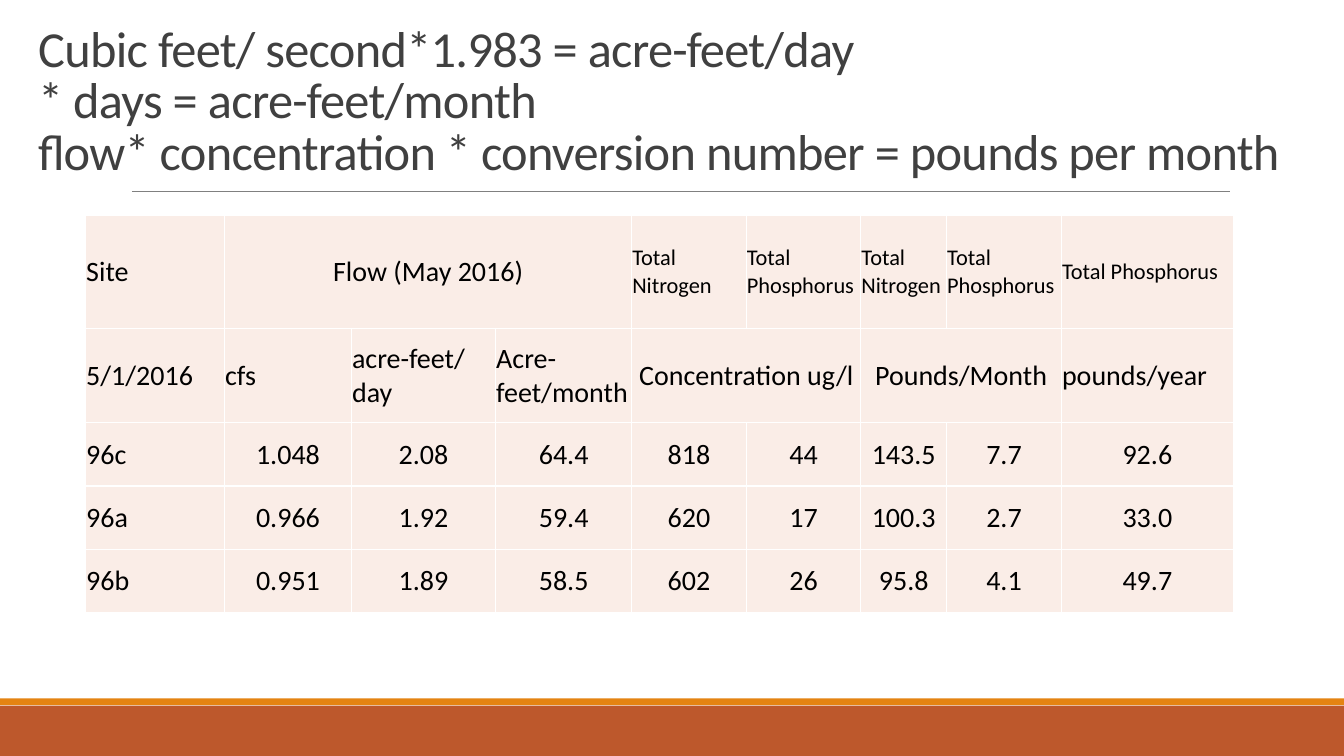
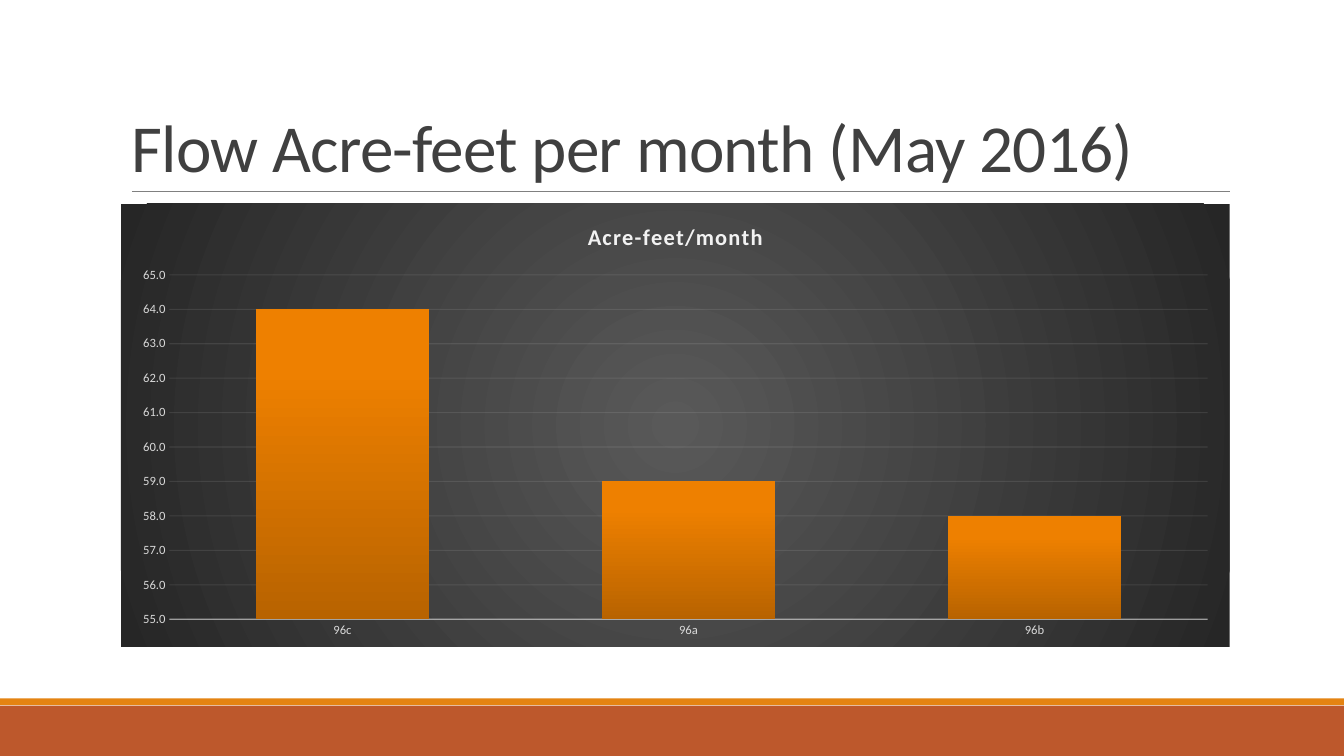
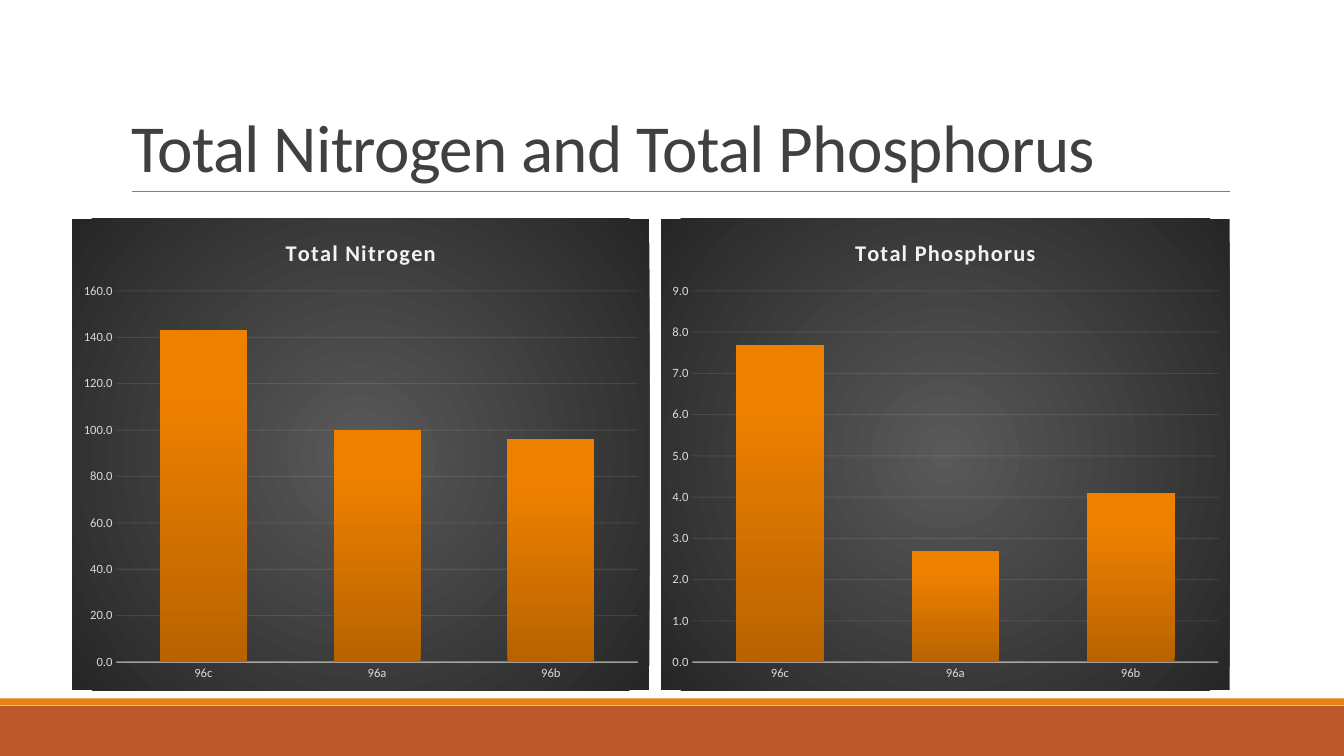
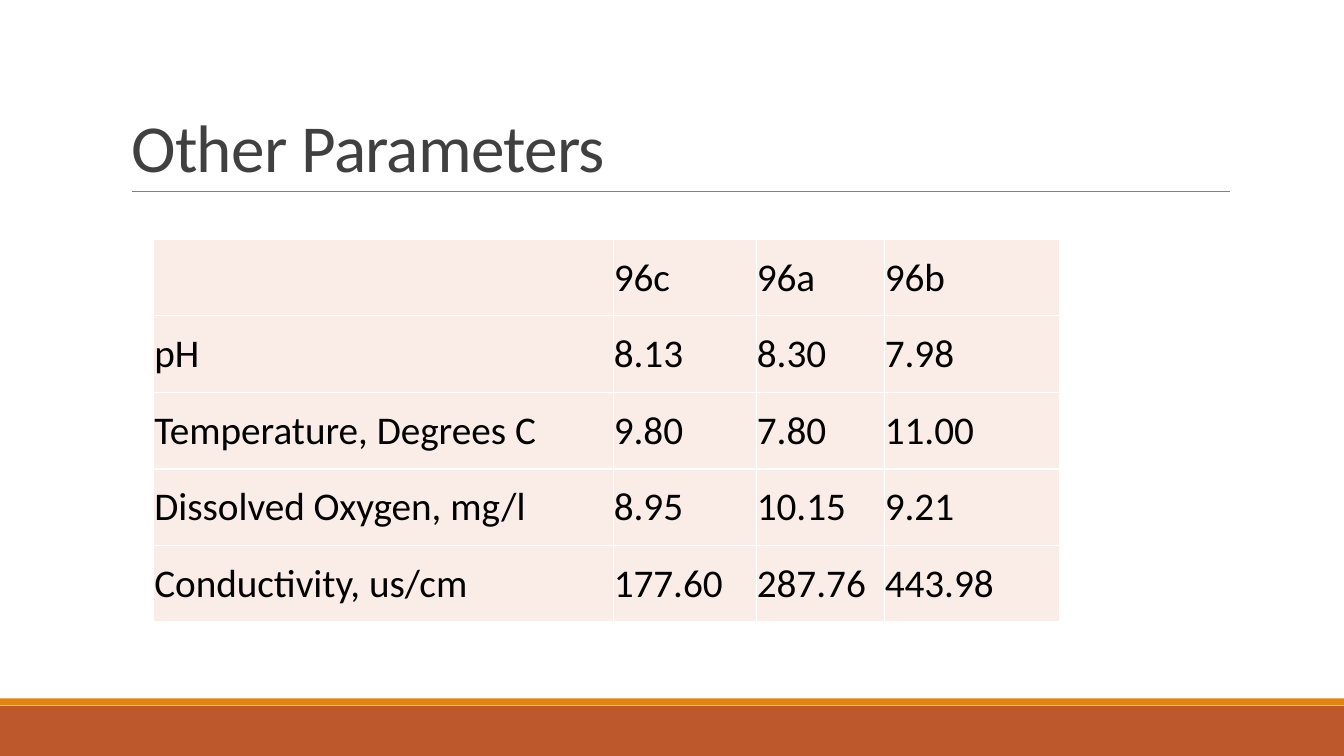
from lxml import etree
from pptx import Presentation
from pptx.chart.data import CategoryChartData
from pptx.dml.color import RGBColor
from pptx.enum.chart import XL_CHART_TYPE as ChartType, XL_TICK_MARK as Tick
from pptx.enum.shapes import MSO_CONNECTOR as Connector, MSO_SHAPE as Shape
from pptx.enum.text import MSO_ANCHOR as Anchor, PP_ALIGN as Align
from pptx.oxml import parse_xml
from pptx.oxml.ns import nsdecls, qn
from pptx.util import Pt

# Shared look
FONT = "Calibri"
RUST = RGBColor(0xBD, 0x58, 0x2C)
ORANGE = RGBColor(0xE4, 0x83, 0x12)
RULE_GRAY = RGBColor(0x80, 0x80, 0x80)
TITLE_GRAY = RGBColor(0x40, 0x40, 0x40)
BLACK = RGBColor(0, 0, 0)
CELL_PINK = RGBColor(0xFA, 0xED, 0xE7)
AXIS_GRAY = RGBColor(0xD9, 0xD9, 0xD9)
PALE = RGBColor(0xF2, 0xF2, 0xF2)
BACKDROP_STOPS = [(0, "595959"), (100, "262626")]
BAR_STOPS = [(0, "B86300"), (80, "EE8000"), (100, "EF8100")]
BACKDROP_SHADE = ('<a:path path="circle"><a:fillToRect l="50000" t="50000" '
                  'r="50000" b="50000"/></a:path>')
BAR_SHADE = '<a:lin ang="16200000" scaled="0"/>'

SLIDE_WIDTH, SLIDE_HEIGHT = 960, 540
BANDS = [(504, 36, RUST), (498.9, 4.8, ORANGE)]  # top, height, colour
RULE = (94.3, 136.8, 878.6)                      # left, top, right
TITLE_BOX = (86.8, 22.3, 792, 114.5)
TITLE_SIZE = 48
SITES = ["96c", "96a", "96b"]

# Content: None marks a cell merged into the one on its left
FLOW_TABLE = dict(
    at=(61.2, 153.7), size=20, small_size=16, center_numbers=True,
    columns=[99.2, 90.7, 103, 97.2, 81.8, 81.9, 61.3, 82, 122.8],
    heights=[80.7, 67.5, 45.3, 45.2, 45.2],
    rows=[
        ["Site", "Flow (May 2016)", None, None, "Total Nitrogen", "Total Phosphorus",
         "Total Nitrogen", "Total Phosphorus", "Total Phosphorus"],
        ["5/1/2016", "cfs", "acre-feet/day", "Acre-feet/month", "Concentration ug/l", None,
         "Pounds/Month", None, "pounds/year"],
        ["96c", "1.048", "2.08", "64.4", "818", "44", "143.5", "7.7", "92.6"],
        ["96a", "0.966", "1.92", "59.4", "620", "17", "100.3", "2.7", "33.0"],
        ["96b", "0.951", "1.89", "58.5", "602", "26", "95.8", "4.1", "49.7"],
    ])
PARAMETER_TABLE = dict(
    at=(109.8, 170.9), size=28, small_size=28, center_numbers=False,
    columns=[328.2, 102.2, 91.4, 125.3], heights=[54.7] * 5,
    rows=[
        ["", *SITES],
        ["pH", "8.13", "8.30", "7.98"],
        ["Temperature, Degrees C", "9.80", "7.80", "11.00"],
        ["Dissolved Oxygen, mg/l", "8.95", "10.15", "9.21"],
        ["Conductivity, us/cm", "177.60", "287.76", "443.98"],
    ])
# name, values, box, axis (minimum, maximum, step)
FLOW_CHART = ("Acre-feet/month", [64, 59, 58], (86.4, 145.5, 792, 316.5), (55, 65, 1))
NITROGEN_CHART = ("Total Nitrogen", [143, 100, 96], (51.6, 156.2, 412.2, 336.8), (0, 160, 20))
PHOSPHORUS_CHART = ("Total Phosphorus", [7.7, 2.7, 4.1], (472.2, 156.2, 406.2, 336.8), (0, 9, 1))

SLIDES = [
    dict(title="Cubic feet/ second*1.983 = acre-feet/day\v* days = acre-feet/month\v"
               "flow* concentration * conversion number = pounds per month",
         title_box=(20.2, 22.3, 905, 110.2), title_size=36, tables=[FLOW_TABLE]),
    dict(title="Flow Acre-feet per month (May 2016)", charts=[FLOW_CHART]),
    dict(title="Total Nitrogen and Total Phosphorus", charts=[NITROGEN_CHART, PHOSPHORUS_CHART]),
    dict(title="Other Parameters", tables=[PARAMETER_TABLE]),
]


def points(values):
    return [Pt(value) for value in values]


def style_font(font, size, color, bold=False):
    for name, value in dict(name=FONT, size=Pt(size), bold=bold).items():
        setattr(font, name, value)
    font.color.rgb = color


def set_spacing(para, hundredths):
    for span in para.runs:
        span.font._element.set("spc", str(hundredths))


def style_line(line, color, width):
    line.color.rgb = color
    line.width = Pt(width)


def gradient_properties(stops, shade):
    marks = "".join(f'<a:gs pos="{position * 1000}"><a:srgbClr val="{color}"/></a:gs>'
                    for position, color in stops)
    return parse_xml(f'<c:spPr {nsdecls("c", "a")}><a:gradFill rotWithShape="1"><a:gsLst>{marks}'
                     f'</a:gsLst>{shade}</a:gradFill><a:ln><a:noFill/></a:ln></c:spPr>')


def add_frame(slide):
    """Bottom bands and the rule under the title."""
    for top, height, color in BANDS:
        band = slide.shapes.add_shape(Shape.RECTANGLE, *points((0, top, SLIDE_WIDTH, height)))
        band.shadow.inherit = False
        band.fill.solid()
        band.fill.fore_color.rgb = color
        band.line.fill.background()
    left, top, right = RULE
    rule = slide.shapes.add_connector(Connector.STRAIGHT, *points((left, top, right, top)))
    style_line(rule.line, RULE_GRAY, 0.5)
    etree.SubElement(rule.element.spPr, qn("a:effectLst"))


def add_title(slide, text, box, size):
    frame = slide.shapes.add_textbox(*points(box)).text_frame
    frame.word_wrap = True
    frame.vertical_anchor = Anchor.BOTTOM
    para = frame.paragraphs[0]
    para.text = text
    para.line_spacing = 0.85
    for span in para.runs:
        style_font(span.font, size, TITLE_GRAY)
    set_spacing(para, -50)


def style_cell(cell):
    margins = dict(margin_left=0.4, margin_right=0.4, margin_top=0.4, margin_bottom=0)
    for name, value in margins.items():
        setattr(cell, name, Pt(value))
    cell.vertical_anchor = Anchor.MIDDLE
    properties = cell._tc.get_or_add_tcPr()
    for side in "LRTB":
        properties.append(parse_xml(
            f'<a:ln{side} {nsdecls("a")} w="12700"><a:solidFill><a:srgbClr val="FFFFFF"/>'
            f'</a:solidFill></a:ln{side}>'))
    cell.fill.solid()
    cell.fill.fore_color.rgb = CELL_PINK


def add_grid(slide, content):
    rows, widths, heights = content["rows"], content["columns"], content["heights"]
    box = (*content["at"], sum(widths), sum(heights))
    table = slide.shapes.add_table(len(rows), len(widths), *points(box)).table
    table.first_row = table.horz_banding = False
    for column, width in zip(table.columns, widths):
        column.width = Pt(width)
    for r, (row, height) in enumerate(zip(rows, heights)):
        table.rows[r].height = Pt(height)
        for c, text in enumerate(row):
            cell = table.cell(r, c)
            style_cell(cell)
            if text is None:
                continue
            end = c + 1
            while end < len(row) and row[end] is None:
                end += 1
            merged = end > c + 1
            if merged:
                cell.merge(table.cell(r, end - 1))
            para = cell.text_frame.paragraphs[0]
            para.text = text
            if merged or (content["center_numbers"] and r > 1 and c > 0):
                para.alignment = Align.CENTER
            size = content["small_size" if r == 0 and c > 3 else "size"]
            for span in para.runs:
                style_font(span.font, size, BLACK)


def add_bars(slide, name, values, box, scale):
    data = CategoryChartData(number_format="#,##0.0")
    data.categories = SITES
    data.add_series(name, values)
    chart = slide.shapes.add_chart(ChartType.COLUMN_CLUSTERED, *points(box), data).chart
    chart.has_legend = False
    style_font(chart.font, 10, BLACK)

    # Heading
    chart.has_title = True
    para = chart.chart_title.text_frame.paragraphs[0]
    para.text = name
    style_font(para.runs[0].font, 16, PALE, bold=True)
    set_spacing(para, 100)

    # Axes
    category_axis, value_axis = chart.category_axis, chart.value_axis
    for axis in (category_axis, value_axis):
        axis.major_tick_mark = axis.minor_tick_mark = Tick.NONE
        style_font(axis.tick_labels.font, 9, AXIS_GRAY)
    value_axis.minimum_scale, value_axis.maximum_scale, value_axis.major_unit = scale
    value_axis.tick_labels.number_format = "#,##0.0"
    value_axis.tick_labels.number_format_is_linked = False
    value_axis.format.line.fill.background()
    style_line(category_axis.format.line, PALE, 1)
    style_line(value_axis.major_gridlines.format.line, PALE, 0.75)
    for place, percent in (("c:catAx/c:spPr", 54), ("c:majorGridlines", 10)):
        for color in chart.element.xpath(f".//{place}//a:srgbClr"):
            etree.SubElement(color, qn("a:alpha")).set("val", str(percent * 1000))

    # Bars and backdrop
    plot = chart.plots[0]
    plot.vary_by_categories = False
    plot.gap_width, plot.overlap = 100, -24
    series = chart.element.xpath(".//c:ser")[0]
    for old in series.findall(qn("c:spPr")):
        series.remove(old)
    series.find(qn("c:tx")).addnext(gradient_properties(BAR_STOPS, BAR_SHADE))
    chart.element.find(qn("c:chart")).addnext(gradient_properties(BACKDROP_STOPS, BACKDROP_SHADE))


def main():
    deck = Presentation()
    deck.slide_width, deck.slide_height = points((SLIDE_WIDTH, SLIDE_HEIGHT))
    for content in SLIDES:
        slide = deck.slides.add_slide(deck.slide_layouts[6])
        add_frame(slide)
        add_title(slide, content["title"], content.get("title_box", TITLE_BOX),
                  content.get("title_size", TITLE_SIZE))
        for table in content.get("tables", []):
            add_grid(slide, table)
        for chart in content.get("charts", []):
            add_bars(slide, *chart)
    deck.save("out.pptx")


if __name__ == "__main__":
    main()
